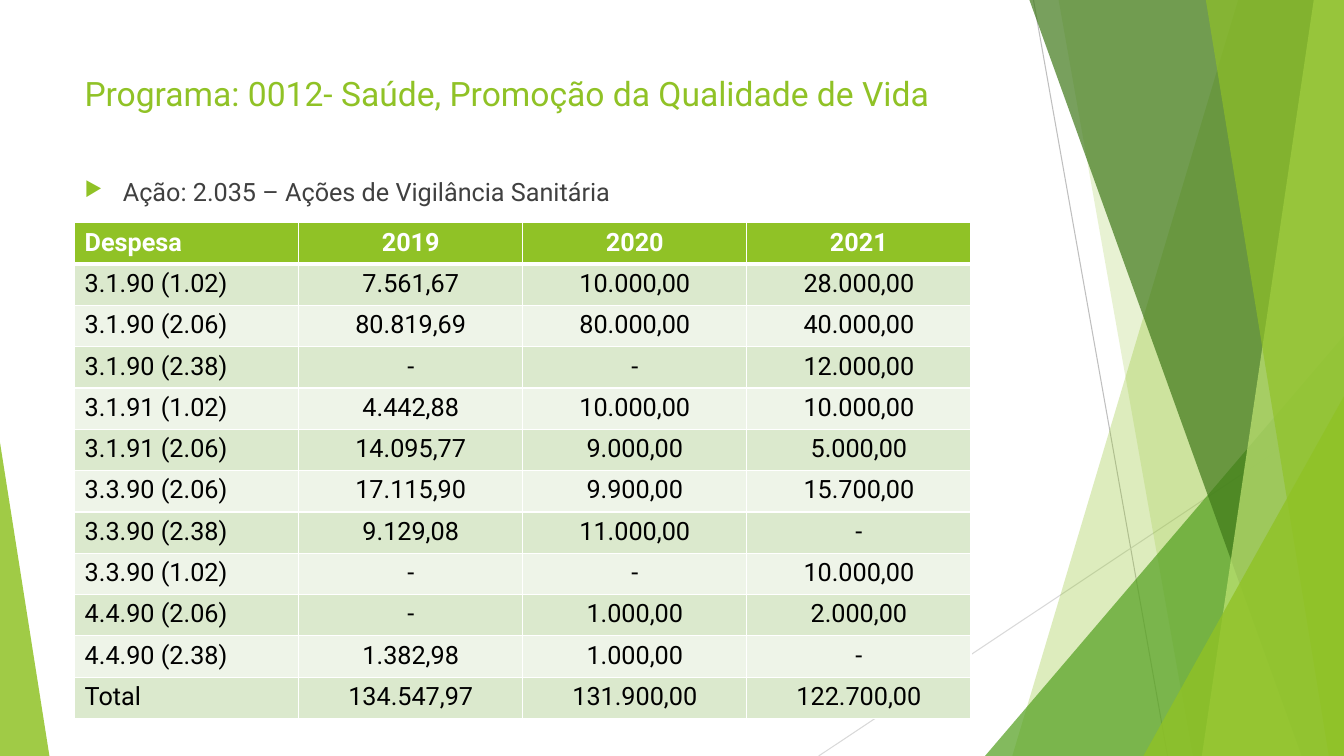
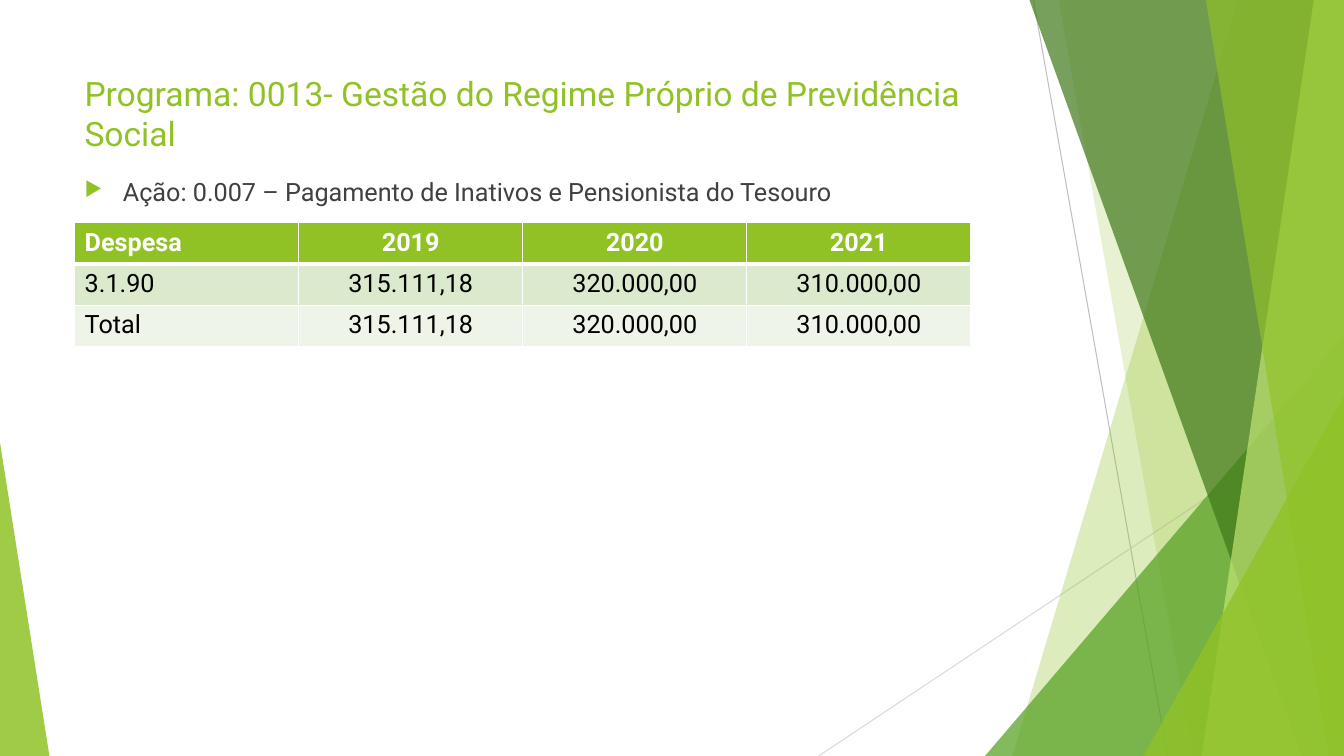
import pptx
import pptx.util
import pptx.dml.color
import pptx.enum.shapes
import pptx.enum.text
import pptx.oxml
import pptx.oxml.ns

Inches = pptx.util.Inches
Pt = pptx.util.Pt
RGBColor = pptx.dml.color.RGBColor
SHAPE = pptx.enum.shapes.MSO_SHAPE
LINE = pptx.enum.shapes.MSO_CONNECTOR
ALIGN = pptx.enum.text.PP_ALIGN
ANCHOR = pptx.enum.text.MSO_ANCHOR
qn = pptx.oxml.ns.qn

# Shared colours
LIME = RGBColor(0x90, 0xC2, 0x26)
GREEN = RGBColor(0x54, 0xA0, 0x21)
DARK = RGBColor(0x3F, 0x78, 0x19)
PALE = RGBColor(0xC0, 0xE4, 0x74)
BAND = RGBColor(0xDB, 0xE9, 0xCD)
LIGHT = RGBColor(0xEE, 0xF4, 0xE8)
GREY = RGBColor(0xBF, 0xBF, 0xBF)
SILVER = RGBColor(0xD9, 0xD9, 0xD9)
INK = RGBColor(0x40, 0x40, 0x40)
BLACK = RGBColor(0, 0, 0)
WHITE = RGBColor(0xFF, 0xFF, 0xFF)

# Shared text formats
TITLE = {"name": "Roboto", "size": Pt(24), "color": LIME}
POINT = {"name": "Roboto", "size": Pt(18), "color": INK}
HEAD = {"name": "Roboto", "size": Pt(18), "color": WHITE, "bold": True}
CELL = {"name": "Roboto", "size": Pt(18), "color": BLACK, "bold": False}

# Slide size and boxes, in inches: left, top, width, height
WIDE, HIGH = 13.33, 7.5
TITLE_BOX = (0.74, 0.67, 9.4, 1.04)
POINT_BOX = (0.74, 1.7, 9.4, 5.04)
TABLE_BOX = (0.74, 2.21, 8.89)
ROW = 0.41

# Backdrop, back to front: slanted bands reach the right edge,
# wedges stand on the bottom edge
LINES = [(10.25, 0, 11.58, HIGH, GREY), (WIDE, 4.03, 8.12, HIGH, SILVER)]
SHADES = [
    ("band", 12.28, 10.04, LIME, 30),
    ("band", 10.5, 11.83, LIME, 20),
    ("wedge", 9.77, 3.56, 4.17, 1, GREEN, 72),
    ("band", 10.21, 12.91, DARK, 70),
    ("band", 13.03, 11.92, PALE, 70),
    ("band", 11.96, 13.18, LIME, 65),
    ("wedge", 11.34, 1.99, 3.57, 1, LIME, 80),
    ("wedge", 0, 0.49, 3.11, 0, LIME, 85),
]

YEARS = ["Despesa", "2019", "2020", "2021"]
PAGES = [
    ("Programa: 0012- Saúde, Promoção da Qualidade de Vida",
     "Ação: 2.035 – Ações de Vigilância Sanitária",
     [YEARS,
      ["3.1.90 (1.02)", "7.561,67", "10.000,00", "28.000,00"],
      ["3.1.90 (2.06)", "80.819,69", "80.000,00", "40.000,00"],
      ["3.1.90 (2.38)", "-", "-", "12.000,00"],
      ["3.1.91 (1.02)", "4.442,88", "10.000,00", "10.000,00"],
      ["3.1.91 (2.06)", "14.095,77", "9.000,00", "5.000,00"],
      ["3.3.90 (2.06)", "17.115,90", "9.900,00", "15.700,00"],
      ["3.3.90 (2.38)", "9.129,08", "11.000,00", "-"],
      ["3.3.90 (1.02)", "-", "-", "10.000,00"],
      ["4.4.90 (2.06)", "-", "1.000,00", "2.000,00"],
      ["4.4.90 (2.38)", "1.382,98", "1.000,00", "-"],
      ["Total", "134.547,97", "131.900,00", "122.700,00"]]),
    ("Programa: 0013- Gestão do Regime Próprio de Previdência Social",
     "Ação: 0.007 – Pagamento de Inativos e Pensionista do Tesouro",
     [YEARS,
      ["3.1.90", "315.111,18", "320.000,00", "310.000,00"],
      ["Total", "315.111,18", "320.000,00", "310.000,00"]]),
]


def make(xml):
    """Parse one drawing element."""
    space = pptx.oxml.ns.nsdecls("a")
    return pptx.oxml.parse_xml(xml.replace(" ", f" {space} ", 1))


def write(para, text, style):
    """Add a run with the given format values."""
    run = para.add_run()
    run.text = text
    for key, value in style.items():
        if key == "color":
            run.font.color.rgb = value
        else:
            setattr(run.font, key, value)


def tint(shape, color, alpha):
    """Fill a shape with a see-through colour, without outline."""
    shape.shadow.inherit = False
    shape.fill.solid()
    shape.fill.fore_color.rgb = color
    shape.line.fill.background()
    tone = next(shape.element.iter(qn("a:srgbClr")))
    tone.append(make(f'<a:alpha val="{alpha * 1000}" />'))


def add_band(shapes, top, foot, color, alpha):
    """Four-sided band from a slanted left side to the right edge."""
    right, base = Inches(WIDE), Inches(HIGH)
    form = shapes.build_freeform(Inches(top), 0)
    form.add_line_segments([(right, 0), (right, base), (Inches(foot), base)])
    tint(form.convert_to_shape(), color, alpha)


def add_wedge(shapes, left, width, height, peak, color, alpha):
    """Right-angled triangle on the bottom edge."""
    box = [Inches(n) for n in (left, HIGH - height, width, height)]
    shape = shapes.add_shape(SHAPE.ISOSCELES_TRIANGLE, *box)
    shape.adjustments[0] = peak
    tint(shape, color, alpha)


def add_back(shapes):
    """Lines and green shades behind the content."""
    for *ends, color in LINES:
        line = shapes.add_connector(LINE.STRAIGHT, *map(Inches, ends))
        line.line.color.rgb = color
        line.line.width = Pt(0.75)
        line.element.spPr.append(make("<a:effectLst />"))
    draw = {"band": add_band, "wedge": add_wedge}
    for kind, *parts in SHADES:
        draw[kind](shapes, *parts)


def add_text(shapes, box, text, style):
    """Wrapped text box, returning its paragraph."""
    frame = shapes.add_textbox(*map(Inches, box)).text_frame
    frame.word_wrap = True
    frame.vertical_anchor = ANCHOR.TOP
    para = frame.paragraphs[0]
    write(para, text, style)
    return para


def add_point(shapes, box, text):
    """Line of text with a green arrow bullet."""
    para = add_text(shapes, box, text, POINT)
    props = para._p.get_or_add_pPr()
    props.set("marL", str(Inches(0.38)))
    props.set("indent", str(-Inches(0.38)))
    for xml in (f'<a:buClr ><a:srgbClr val="{LIME}"/></a:buClr>',
                '<a:buSzPct val="80000"/>',
                '<a:buChar char="▶"/>'):
        props.append(make(xml))


def edge(cell, top, base):
    """White cell borders; top and base widths in points."""
    props = cell._tc.get_or_add_tcPr()
    sides = {"lnL": 1, "lnR": 1, "lnT": top, "lnB": base}
    for spot, (side, width) in enumerate(sides.items()):
        props.insert(spot, make(
            f'<a:{side} w="{Pt(width)}"><a:solidFill>'
            f'<a:srgbClr val="{WHITE}"/></a:solidFill></a:{side}>'))


def add_grid(shapes, box, rows):
    """Table with a green head and striped rows."""
    left, top, width = box
    count = len(rows[0])
    area = map(Inches, (left, top, width, ROW * len(rows)))
    table = shapes.add_table(len(rows), count, *area).table
    table.first_row = table.horz_banding = False
    for col in table.columns:
        col.width = Inches(width / count)
    for r, row in enumerate(rows):
        table.rows[r].height = Inches(ROW)
        fill = LIME if r == 0 else (LIGHT, BAND)[r % 2]
        for c, text in enumerate(row):
            cell = table.cell(r, c)
            cell.fill.solid()
            cell.fill.fore_color.rgb = fill
            edge(cell, 3 if r == 1 else 1, 3 if r == 0 else 1)
            para = cell.text_frame.paragraphs[0]
            para.alignment = ALIGN.CENTER if c else ALIGN.LEFT
            write(para, text, CELL if r else HEAD)


def add_page(deck, title, point, rows):
    """One slide: backdrop, title, action and costs."""
    shapes = deck.slides.add_slide(deck.slide_layouts[6]).shapes
    add_back(shapes)
    add_text(shapes, TITLE_BOX, title, TITLE)
    add_point(shapes, POINT_BOX, point)
    add_grid(shapes, TABLE_BOX, rows)


def main():
    deck = pptx.Presentation()
    deck.slide_width = Inches(WIDE)
    deck.slide_height = Inches(HIGH)
    for page in PAGES:
        add_page(deck, *page)
    deck.save("out.pptx")


if __name__ == "__main__":
    main()
